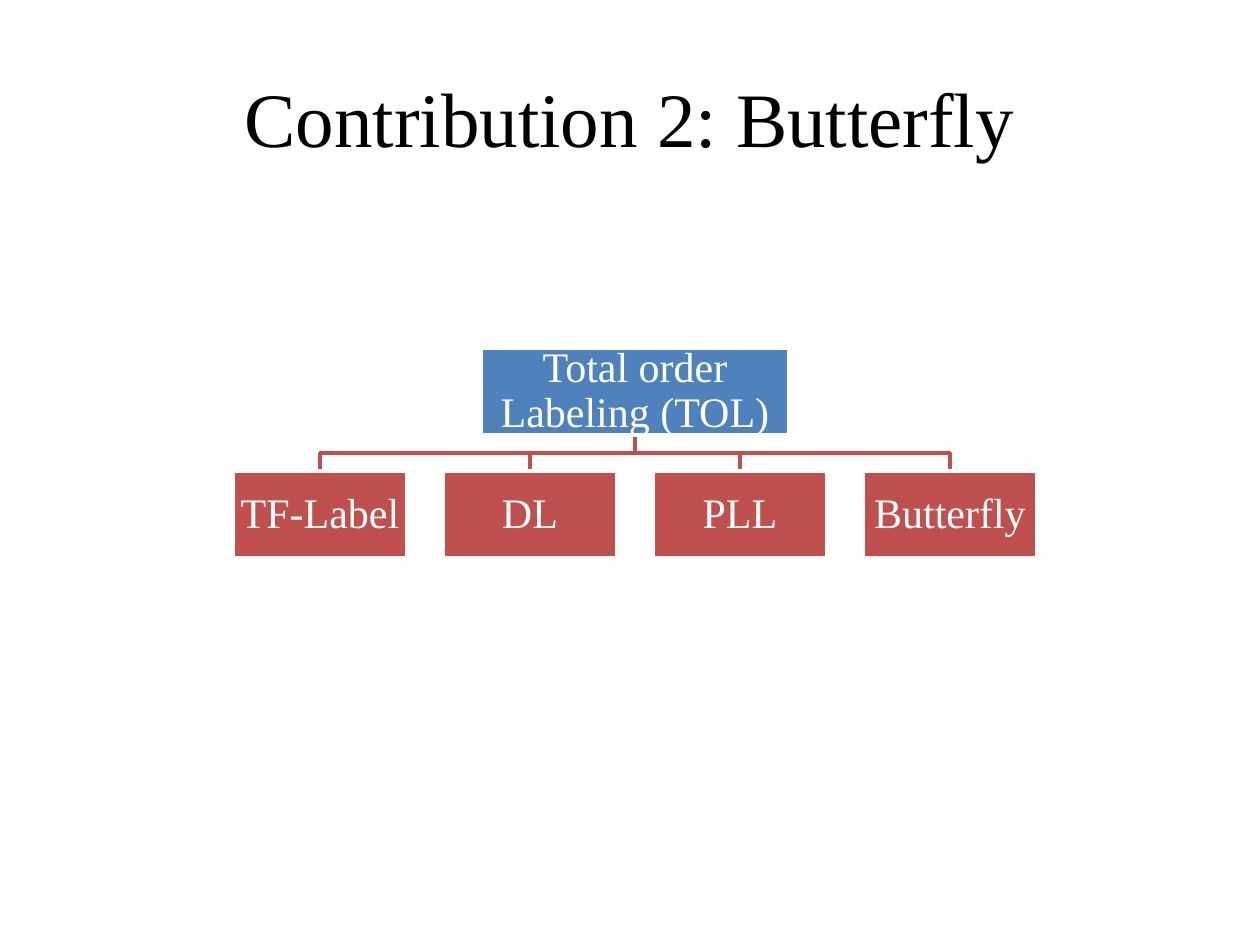
from dataclasses import dataclass

from pptx import Presentation
from pptx.dml.color import RGBColor
from pptx.enum.shapes import MSO_SHAPE
from pptx.enum.text import MSO_ANCHOR, PP_ALIGN
from pptx.util import Emu, Pt

RECTANGLE = MSO_SHAPE.RECTANGLE
MIDDLE = MSO_ANCHOR.MIDDLE
CENTER = PP_ALIGN.CENTER

EMU_PER_PX = 914400 / 126
FONT = "Times New Roman"
BLACK, WHITE, BLUE, RED = "000000", "FFFFFF", "4F81BD", "C0504D"

CHART_CENTER = 635
NODE_HEIGHT = 87
ROOT_TOP, ROOT_WIDTH = 348, 308
METHOD_TOP, METHOD_WIDTH, METHOD_PITCH = 471, 174, 210
METHODS = ("TF-Label", "DL", "PLL", "Butterfly")


@dataclass(frozen=True)
class Node:
    label: str
    center: int
    top: int
    width: int
    color: str


def px(length: int) -> Emu:
    return Emu(round(length * EMU_PER_PX))


def rgb(color: str) -> RGBColor:
    return RGBColor.from_string(color)


def set_text(shape, text: str, *, size: int, color: str,
             inset: int, line_spacing: float = 1.0) -> None:
    frame = shape.text_frame
    frame.word_wrap = True
    frame.vertical_anchor = MIDDLE
    frame.margin_left = frame.margin_right = px(inset)
    frame.margin_top = frame.margin_bottom = px(inset)
    paragraph = frame.paragraphs[0]
    paragraph.alignment = CENTER
    paragraph.line_spacing = line_spacing
    run = paragraph.add_run()
    run.text = text
    run.font.name = FONT
    run.font.size = Pt(size)
    run.font.color.rgb = rgb(color)


def set_line(shape, color: str) -> None:
    shape.line.color.rgb = rgb(color)
    shape.line.width = Pt(2)
    shape.shadow.inherit = False


def draw_branch(slide, parent: Node, child: Node) -> None:
    """Draw an elbow from the parent's bottom to the child's top."""
    start = parent.top + NODE_HEIGHT
    bend = (start + child.top) // 2
    builder = slide.shapes.build_freeform(parent.center, start, scale=EMU_PER_PX)
    builder.add_line_segments(
        [(parent.center, bend), (child.center, bend), (child.center, child.top)],
        close=False)
    branch = builder.convert_to_shape()
    branch.fill.background()
    set_line(branch, RED)


def draw_node(slide, node: Node) -> None:
    box = slide.shapes.add_shape(
        RECTANGLE, px(node.center - node.width // 2), px(node.top),
        px(node.width), px(NODE_HEIGHT))
    box.fill.solid()
    box.fill.fore_color.rgb = rgb(node.color)
    set_line(box, WHITE)
    set_text(box, node.label, size=24, color=WHITE, inset=2, line_spacing=0.9)


def main() -> None:
    presentation = Presentation()
    presentation.slide_width, presentation.slide_height = px(1260), px(945)
    slide = presentation.slides.add_slide(presentation.slide_layouts[6])

    title = slide.shapes.add_textbox(px(63), px(38), px(1134), px(157))
    set_text(title, "Contribution 2: Butterfly", size=44, color=BLACK, inset=6)

    root = Node("Total order Labeling (TOL)", CHART_CENTER, ROOT_TOP, ROOT_WIDTH, BLUE)
    first_center = CHART_CENTER - METHOD_PITCH * (len(METHODS) - 1) // 2
    methods = [
        Node(label, first_center + index * METHOD_PITCH, METHOD_TOP, METHOD_WIDTH, RED)
        for index, label in enumerate(METHODS)
    ]
    for method in reversed(methods):
        draw_branch(slide, root, method)
    for node in (root, *methods):
        draw_node(slide, node)

    presentation.save("out.pptx")


if __name__ == "__main__":
    main()
